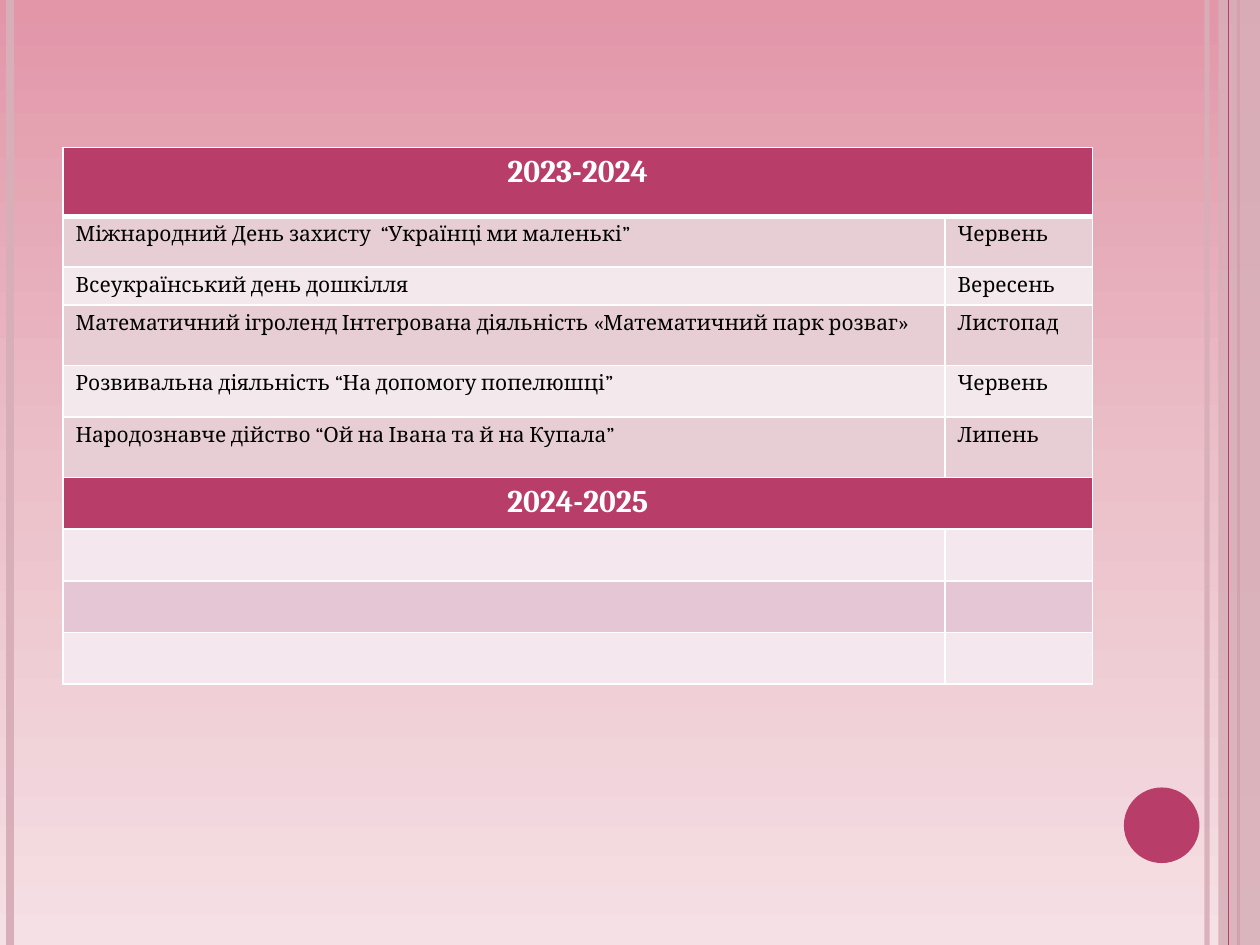
import dataclasses
import copy

import pptx
import pptx.dml.color
import pptx.enum.shapes
import pptx.enum.text
import pptx.oxml
import pptx.oxml.ns
import pptx.util

WIDTH, HEIGHT = 10, 7.5
ACCENT, STRIPE, WHITE, BLACK = "B83D68", "D8AFB9", "FFFFFF", "000000"
ROSE, PALE_ROSE = "E6CED4", "F3E8EB"
MAUVE, PALE_MAUVE = "E5C6D5", "F4E7ED"
BACKGROUND = [(0, "E296A8"), (0.5, "EBC0C9"), (1, "F5E0E5")]
COLUMNS = [7, 1.17]


@dataclasses.dataclass
class Stripe:
    x: float
    color: str
    weight: float
    opacity: int = 100


@dataclasses.dataclass
class Row:
    height: float
    fill: str
    texts: tuple = ()
    heading: bool = False


STRIPES_BELOW = [Stripe(9.58, STRIPE, 3, 93), Stripe(0.08, STRIPE, 4.5), Stripe(9.83, ACCENT, 1.5)]
STRIPE_ABOVE = Stripe(9.75, ACCENT, 0.75)

ROWS = [
    Row(0.55, ACCENT, ("2023-2024",), True),
    Row(0.4, ROSE, ("Міжнародний День захисту  “Українці ми маленькі”", "Червень")),
    Row(0.3, PALE_ROSE, ("Всеукраїнський день дошкілля", "Вересень")),
    Row(0.48, ROSE, ("Математичний ігроленд Інтегрована діяльність «Математичний парк розваг»",
                     "Листопад")),
    Row(0.41, PALE_ROSE, ("Розвивальна діяльність “На допомогу попелюшці”", "Червень")),
    Row(0.48, ROSE, ("Народознавче дійство “Ой на Івана та й на Купала”", "Липень")),
    Row(0.41, ACCENT, ("2024-2025",), True),
    Row(0.41, PALE_MAUVE),
    Row(0.41, MAUVE),
    Row(0.41, PALE_MAUVE),
]


def rgb(color: str):
    return pptx.dml.color.RGBColor.from_string(color)


def inches(*lengths: float) -> list:
    return [pptx.util.Inches(length) for length in lengths]


def set_opacity(shape, percent: int) -> None:
    color = shape._element.spPr.find(".//" + pptx.oxml.ns.qn("a:srgbClr"))
    alpha = color.makeelement(pptx.oxml.ns.qn("a:alpha"), {"val": str(percent * 1000)})
    color.append(alpha)


def paint_background(page) -> None:
    fill = page.background.fill
    fill.gradient()
    fill.gradient_angle = 270
    stops = page.element.find(".//" + pptx.oxml.ns.qn("a:gsLst"))
    stops.insert(1, copy.deepcopy(stops[0]))
    for stop, (position, color) in zip(fill.gradient_stops, BACKGROUND):
        stop.position = position
        stop.color.rgb = rgb(color)


def draw_stripe(page, stripe: Stripe) -> None:
    line = page.shapes.add_connector(
        pptx.enum.shapes.MSO_CONNECTOR.STRAIGHT, *inches(stripe.x, 0, stripe.x, HEIGHT))
    line.line.color.rgb = rgb(stripe.color)
    line.line.width = pptx.util.Pt(stripe.weight)
    if stripe.opacity < 100:
        set_opacity(line, stripe.opacity)
    properties = line._element.spPr
    properties.append(properties.makeelement(pptx.oxml.ns.qn("a:effectLst"), {}))


def draw_shape(page, kind, box: tuple, color: str):
    shape = page.shapes.add_shape(kind, *inches(*box))
    shape.shadow.inherit = False
    shape.fill.solid()
    shape.fill.fore_color.rgb = rgb(color)
    shape.line.fill.background()
    return shape


def draw_borders(cell, top: float, bottom: float) -> None:
    properties = cell._tc.get_or_add_tcPr()
    for index, (side, weight) in enumerate({"L": 1, "R": 1, "T": top, "B": bottom}.items()):
        properties.insert(index, pptx.oxml.parse_xml(
            f'<a:ln{side} {pptx.oxml.ns.nsdecls("a")} w="{pptx.util.Pt(weight)}">'
            f'<a:solidFill><a:srgbClr val="{WHITE}"/></a:solidFill></a:ln{side}>'))


def write_cell(cell, text: str, heading: bool) -> None:
    para = cell.text_frame.paragraphs[0]
    if heading:
        para.alignment = pptx.enum.text.PP_ALIGN.CENTER
    span = para.add_run()
    span.text = text
    span.font.color.rgb = rgb(WHITE if heading else BLACK)
    style = {"name": "Cambria", "size": pptx.util.Pt(18 if heading else 12), "bold": heading}
    for name, value in style.items():
        setattr(span.font, name, value)


def draw_table(page, left: float, top: float) -> None:
    height = sum(row.height for row in ROWS)
    table = page.shapes.add_table(
        len(ROWS), len(COLUMNS), *inches(left, top, sum(COLUMNS), height)).table
    table.first_row = table.horz_banding = False
    for column, width in zip(table.columns, COLUMNS):
        column.width = pptx.util.Inches(width)
    for index, row in enumerate(ROWS):
        table.rows[index].height = pptx.util.Inches(row.height)
        cells = [table.cell(index, column) for column in range(len(COLUMNS))]
        if row.heading:
            cells[0].merge(cells[-1])
        for cell in cells:
            cell.fill.solid()
            cell.fill.fore_color.rgb = rgb(row.fill)
            draw_borders(cell, 3 if index == 1 else 1, 3 if index == 0 else 1)
        for cell, text in zip(cells, row.texts):
            write_cell(cell, text, row.heading)


def main() -> None:
    deck = pptx.Presentation()
    deck.slide_width, deck.slide_height = inches(WIDTH, HEIGHT)
    page = deck.slides.add_slide(deck.slide_layouts[6])
    paint_background(page)
    for stripe in STRIPES_BELOW:
        draw_stripe(page, stripe)
    shapes = pptx.enum.shapes.MSO_SHAPE
    band = draw_shape(page, shapes.RECTANGLE, (9.67, 0, 0.33, HEIGHT), STRIPE)
    set_opacity(band, 87)
    draw_stripe(page, STRIPE_ABOVE)
    draw_shape(page, shapes.OVAL, (8.92, 6.25, 0.6, 0.6), ACCENT)
    draw_table(page, 0.5, 1.17)
    deck.save("out.pptx")


if __name__ == "__main__":
    main()
